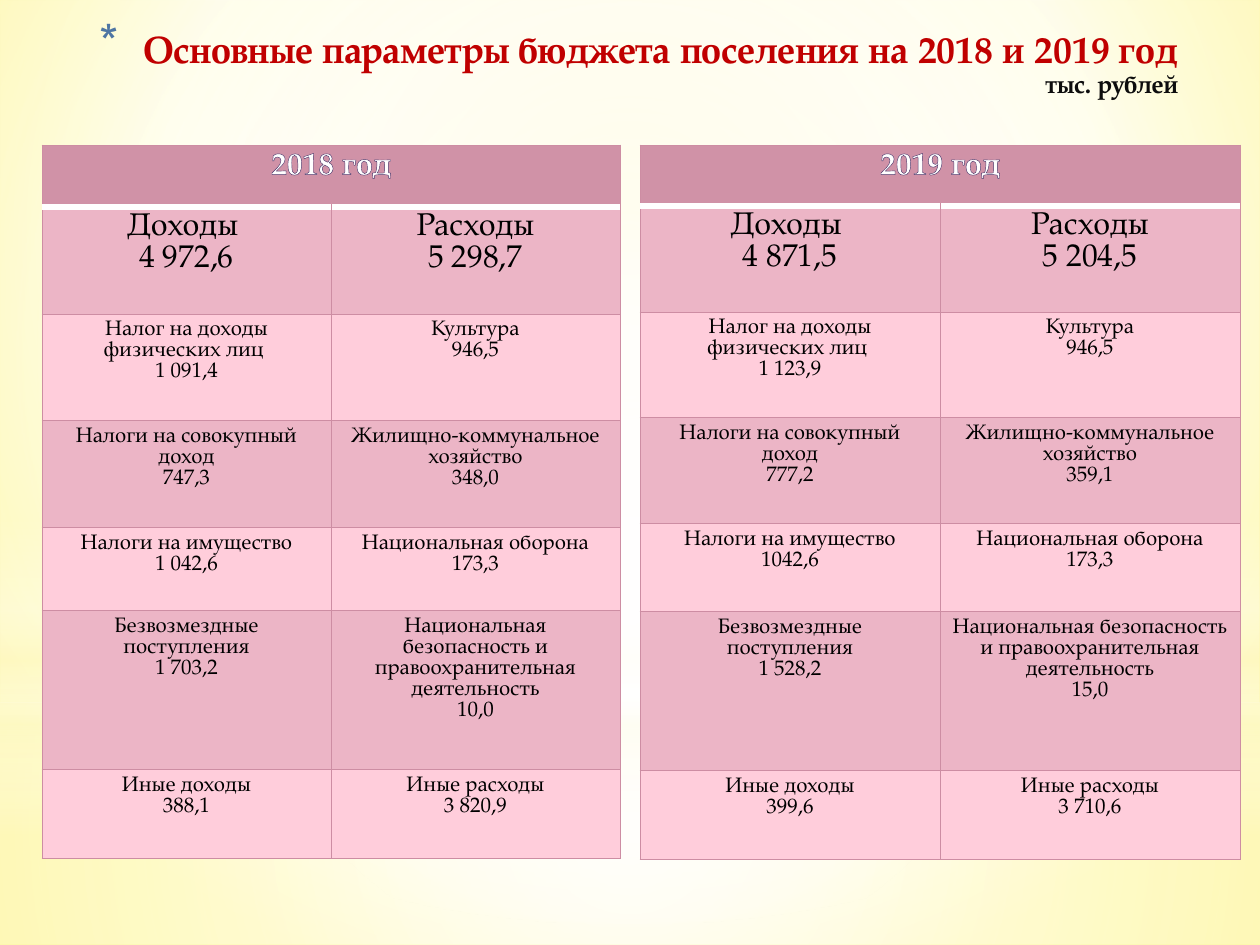
from lxml import etree
from pptx import Presentation
from pptx.dml.color import RGBColor
from pptx.enum.shapes import MSO_SHAPE
from pptx.enum.text import MSO_ANCHOR, MSO_AUTO_SIZE, PP_ALIGN
from pptx.oxml import parse_xml
from pptx.oxml.ns import nsdecls, qn
from pptx.util import Emu, Pt

RECT, OVAL = MSO_SHAPE.RECTANGLE, MSO_SHAPE.OVAL
CENTER, RIGHT = PP_ALIGN.CENTER, PP_ALIGN.RIGHT
TOP, NO_FIT = MSO_ANCHOR.TOP, MSO_AUTO_SIZE.NONE

FONT = "TeX Gyre Pagella"
RED = RGBColor(0xC0, 0x00, 0x00)
INK = RGBColor(0x0D, 0x0D, 0x0D)
BLACK = RGBColor(0x00, 0x00, 0x00)
WHITE = RGBColor(0xFF, 0xFF, 0xFF)
BLUE = RGBColor(0x4E, 0x75, 0xA3)
PLUM = RGBColor(0x4C, 0x37, 0x6B)
MAUVE = RGBColor(0xD0, 0x92, 0xA7)
ROSE = RGBColor(0xEC, 0xB5, 0xC6)
PINK = RGBColor(0xFF, 0xCD, 0xDB)
EDGE = RGBColor(0xCD, 0x8D, 0xA3)
CREAM = RGBColor(0xFE, 0xFA, 0xC9)
PALE = RGBColor(0xFF, 0xF9, 0xB5)
LEMON = RGBColor(0xFF, 0xF4, 0x6F)

MID = (50, 50, 50, 50)
LAYERS = [
    (RECT, 703, 242, MID, [(0, WHITE, 91), (37, WHITE, 76), (100, CREAM, 79)]),
    (RECT, 0, 703, MID, [(0, WHITE, 89), (48, WHITE, 62), (100, CREAM, 79)]),
    (RECT, 519, 315, None, [(0, WHITE, 0), (29, WHITE, 30), (45, CREAM, 40),
                            (55, WHITE, 26), (65, CREAM, 60), (100, WHITE, 0)]),
    (OVAL, 221, 703, MID, [(0, WHITE, 100), (56, WHITE, 0)]),
]

NAMES = [
    ("Доходы ", "Расходы"),
    ("Налог на доходы физических лиц ", "Культура"),
    ("Налоги на совокупный доход", "Жилищно-коммунальное хозяйство"),
    ("Налоги на имущество", "Национальная оборона"),
    ("Безвозмездные поступления",
     "Национальная безопасность и правоохранительная деятельность"),
    ("Иные доходы", "Иные расходы"),
]
SUMS_18 = [("4 972,6", "5 298,7"), ("1 091,4", "946,5"), ("747,3", "348,0"),
           ("1 042,6", "173,3"), ("1 703,2", "10,0"), ("388,1", "3 820,9")]
SUMS_19 = [("4 871,5", "5 204,5"), ("1 123,9", "946,5"), ("777,2", "359,1"),
           ("1042,6", "173,3"), ("1 528,2", "15,0"), ("399,6", "3 710,6")]


def px(n):
    return Emu(round(n * 914400 / 126))


def shade(props, stops, focus):
    """Swap the empty fill of props for a gradient, round when focus is given."""
    marks = "".join(
        f'<a:gs pos="{pos * 1000}"><a:srgbClr val="{color}">'
        f'<a:alpha val="{alpha * 1000}"/></a:srgbClr></a:gs>'
        for pos, color, alpha in stops)
    if focus:
        sides = " ".join(f'{k}="{v * 1000}"' for k, v in zip("ltrb", focus))
        way = f'<a:path path="circle"><a:fillToRect {sides}/></a:path>'
    else:
        way = '<a:lin ang="5400000" scaled="0"/>'
    grad = parse_xml(f'<a:gradFill {nsdecls("a")} rotWithShape="1">'
                     f'<a:gsLst>{marks}</a:gsLst>{way}</a:gradFill>')
    props.replace(props.find(qn("a:noFill")), grad)


def write(para, text, size, color, bold=False, align=CENTER, lead=None, rim=None):
    para.alignment = align
    para.line_spacing = Pt(lead or size)
    para.space_before = para.space_after = Pt(0)
    run = para.add_run()
    run.text = text
    run.font.name, run.font.size = FONT, Pt(size)
    run.font.bold, run.font.color.rgb = bold, color
    if rim:
        run.font._element.insert(0, parse_xml(
            f'<a:ln {nsdecls("a")} w="9525"><a:solidFill>'
            f'<a:srgbClr val="{rim}"/></a:solidFill></a:ln>'))


def add_back(slide):
    slide.background.fill.background()
    shade(slide._element.find(".//" + qn("p:bgPr")),
          [(0, PALE, 100), (60, WHITE, 100), (100, LEMON, 100)], (20, 10, 20, 60))
    for kind, top, high, focus, stops in LAYERS:
        shape = slide.shapes.add_shape(kind, 0, px(top), px(1260), px(high))
        shape.shadow.inherit = False
        shape.line.fill.background()
        shape.fill.background()
        shade(shape._element.spPr, stops, focus)


def add_title(slide):
    title = slide.shapes.title
    slide.shapes._spTree.append(title._element)
    title.left, title.top, title.width, title.height = map(px, (42, 16, 1197, 79))
    frame = title.text_frame
    frame.word_wrap, frame.auto_size = True, NO_FIT
    frame.vertical_anchor = TOP
    frame.margin_right, frame.margin_top = px(61), px(6)
    head = frame.paragraphs[0]
    write(head, "Основные параметры бюджета поселения на 2018 и 2019 год",
          21.6, RED, bold=True, align=RIGHT, lead=28)
    props = head._p.get_or_add_pPr()
    props.set("marL", str(px(44)))
    props.set("indent", str(-px(44)))
    color = etree.SubElement(props, qn("a:buClr"))
    etree.SubElement(color, qn("a:srgbClr"), val=str(BLUE))
    etree.SubElement(props, qn("a:buSzPct"), val="128000")
    etree.SubElement(props, qn("a:buChar"), char="*")
    unit = frame.add_paragraph()
    write(unit, "тыс. рублей", 14.4, INK, bold=True, align=RIGHT, lead=16)
    etree.SubElement(unit._p.get_or_add_pPr(), qn("a:buNone"))


def paint(cell, color, top=(EDGE, 0.5), base=(EDGE, 0.5)):
    """Fill a cell and rule its four sides."""
    props = cell._tc.get_or_add_tcPr()
    thin = (EDGE, 0.5)
    for side, (tone, width) in zip("LRTB", (thin, thin, top, base)):
        line = etree.SubElement(props, qn(f"a:ln{side}"), w=str(Pt(width)))
        fill = etree.SubElement(line, qn("a:solidFill"))
        etree.SubElement(fill, qn("a:srgbClr"), val=str(tone))
    cell.fill.solid()
    cell.fill.fore_color.rgb = color


def add_year(slide, year, left, wide, rows, sums):
    frame = slide.shapes.add_table(len(rows), 2, px(left), px(145),
                                   px(2 * wide), px(sum(rows)))
    table = frame.table
    table.first_row = table.horz_banding = False
    for col in table.columns:
        col.width = px(wide)
    for row, high in zip(table.rows, rows):
        row.height = px(high)
    thin, thick = (EDGE, 0.5), (WHITE, 3.78)
    for cell in table.rows[0].cells:
        paint(cell, MAUVE, base=thick)
    head = table.cell(0, 0)
    head.merge(table.cell(0, 1))
    write(head.text_frame.paragraphs[0], year, 18, WHITE, bold=True, rim=PLUM)
    for r, pairs in enumerate(zip(NAMES, sums), 1):
        size, top = (18, thick) if r == 1 else (12, thin)
        for c, (name, total) in enumerate(zip(*pairs)):
            cell = table.cell(r, c)
            paint(cell, ROSE if r % 2 else PINK, top=top)
            write(cell.text_frame.paragraphs[0], name, size, BLACK)
            write(cell.text_frame.add_paragraph(), total, size, BLACK)


def main():
    deck = Presentation()
    deck.slide_width, deck.slide_height = px(1260), px(945)
    slide = deck.slides.add_slide(deck.slide_layouts[5])
    add_back(slide)
    add_title(slide)
    add_year(slide, "2018 год", 42, 289, [62, 107, 107, 107, 83, 159, 89], SUMS_18)
    add_year(slide, "2019 год", 640, 300, [61, 106, 106, 106, 88, 159, 89], SUMS_19)
    deck.save("out.pptx")


if __name__ == "__main__":
    main()
